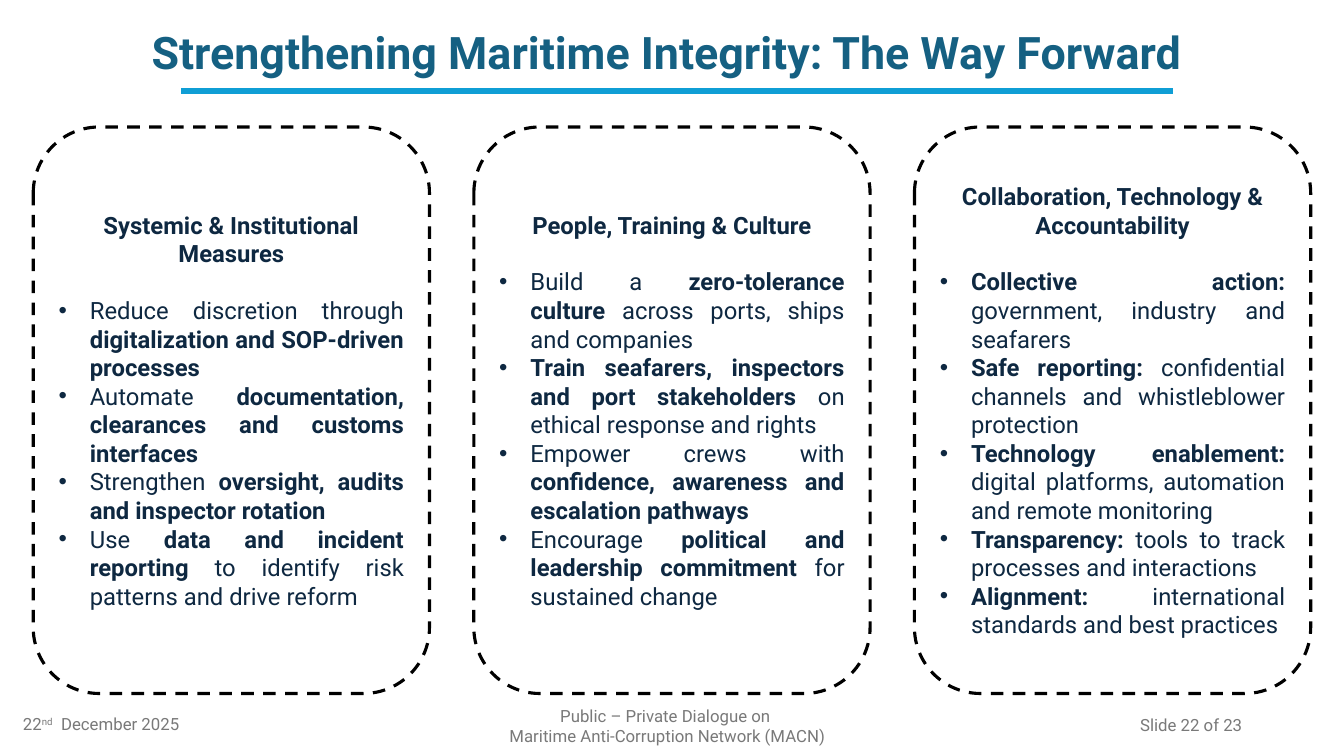
from lxml import etree
from pptx import Presentation
from pptx.dml.color import RGBColor
from pptx.enum import dml, shapes, text
from pptx.oxml import ns
from pptx.util import Inches, Pt

FONT = "Roboto"
TITLE_BLUE = RGBColor(0x15, 0x60, 0x82)
RULE_BLUE = RGBColor(0x0F, 0x9E, 0xD5)
NAVY = RGBColor(0x0E, 0x28, 0x41)
GREY = RGBColor(0x79, 0x79, 0x79)
BLACK = RGBColor(0, 0, 0)
ALIGN = text.PP_ALIGN

# Double asterisks enclose the bold parts of each point.
PILLARS = [
    ("Systemic & Institutional Measures", [
        "Reduce discretion through **digitalization and SOP-driven processes**",
        "Automate **documentation, clearances and customs interfaces**",
        "Strengthen **oversight, audits and inspector rotation**",
        "Use **data and incident reporting** to identify risk patterns and drive reform",
    ]),
    ("People, Training & Culture", [
        "Build a **zero-tolerance culture** across ports, ships and companies",
        "**Train seafarers, inspectors and port stakeholders** on ethical response and rights",
        "Empower crews with **confidence, awareness and escalation pathways**",
        "Encourage **political and leadership commitment** for sustained change",
    ]),
    ("Collaboration, Technology & Accountability", [
        "**Collective action:** government, industry and seafarers",
        "**Safe reporting:** confidential channels and whistleblower protection",
        "**Technology enablement:** digital platforms, automation and remote monitoring",
        "**Transparency:** tools to track processes and interactions",
        "**Alignment:** international standards and best practices",
    ]),
]

FOOTERS = [
    (0.13, 6.98, 3, ALIGN.LEFT, [["22", "nd", "  December 2025"]]),
    (4.37, 7, 4.5, ALIGN.CENTER,
     [["Public – Private Dialogue on "], ["Maritime Anti-Corruption Network (MACN)"]]),
    (9.42, 6.99, 3, ALIGN.RIGHT, [["Slide 22 of 23"]]),
]


def style(paragraph, size, color, align, bold=None):
    paragraph.alignment = align
    font = paragraph.font
    font.name, font.size, font.bold = FONT, Pt(size), bold
    font.color.rgb = color


def add_bullet(paragraph):
    properties = paragraph._p.get_or_add_pPr()
    properties.set("marL", str(Inches(0.31)))
    properties.set("indent", str(-Inches(0.31)))
    bullet_font = etree.SubElement(properties, ns.qn("a:buFont"))
    bullet_font.set("typeface", "Arial")
    etree.SubElement(properties, ns.qn("a:buChar")).set("char", "•")


deck = Presentation()
deck.slide_width, deck.slide_height = Inches(13.33), Inches(7.5)
slide = deck.slides.add_slide(deck.slide_layouts[5])

title = slide.shapes.title
title.left, title.top = Inches(1.28), Inches(0.14)
title.width, title.height = Inches(10.67), Inches(0.81)
title.text_frame.text = "Strengthening Maritime Integrity: The Way Forward"
title.text_frame.vertical_anchor = text.MSO_ANCHOR.MIDDLE
heading = title.text_frame.paragraphs[0]
heading.line_spacing = 0.9
style(heading, 32, TITLE_BLUE, ALIGN.CENTER, True)

title_rule = slide.shapes.add_connector(
    shapes.MSO_CONNECTOR.STRAIGHT, Inches(1.8), Inches(0.9), Inches(11.63), Inches(0.9))
title_rule.line.color.rgb = RULE_BLUE
title_rule.line.width = Pt(4.5)
etree.SubElement(title_rule._element.spPr, ns.qn("a:effectLst"))

for column, (name, points) in enumerate(PILLARS):
    pillar = slide.shapes.add_shape(
        shapes.MSO_SHAPE.ROUNDED_RECTANGLE,
        Inches(0.33 + 4.37 * column), Inches(1.26), Inches(3.93), Inches(5.62))
    pillar.shadow.inherit = False
    pillar.fill.background()
    pillar.line.color.rgb = BLACK
    pillar.line.width = Pt(2.25)
    pillar.line.dash_style = dml.MSO_LINE.DASH

    body = pillar.text_frame
    body.word_wrap = True
    body.vertical_anchor = text.MSO_ANCHOR.MIDDLE
    body.margin_left = body.margin_right = Inches(0.06)
    body.margin_top = body.margin_bottom = Inches(0.06)
    body.text = name
    style(body.paragraphs[0], 17, NAVY, ALIGN.CENTER, True)
    body.paragraphs[0].space_after = Pt(20)
    for point in points:
        item = body.add_paragraph()
        add_bullet(item)
        style(item, 17, NAVY, ALIGN.JUSTIFY)
        for index, part in enumerate(point.split("**")):
            if part:
                run = item.add_run()
                run.text = part
                run.font.bold = index % 2 == 1

for left, top, width, align, lines in FOOTERS:
    footer = slide.shapes.add_textbox(Inches(left), Inches(top), Inches(width), Inches(0.4))
    frame = footer.text_frame
    frame.word_wrap = True
    frame.vertical_anchor = text.MSO_ANCHOR.MIDDLE
    for number, parts in enumerate(lines):
        line = frame.add_paragraph() if number else frame.paragraphs[0]
        style(line, 12, GREY, align)
        for part in parts:
            run = line.add_run()
            run.text = part
            if part == "nd":
                run.font._element.set("baseline", "30000")

deck.save("out.pptx")
